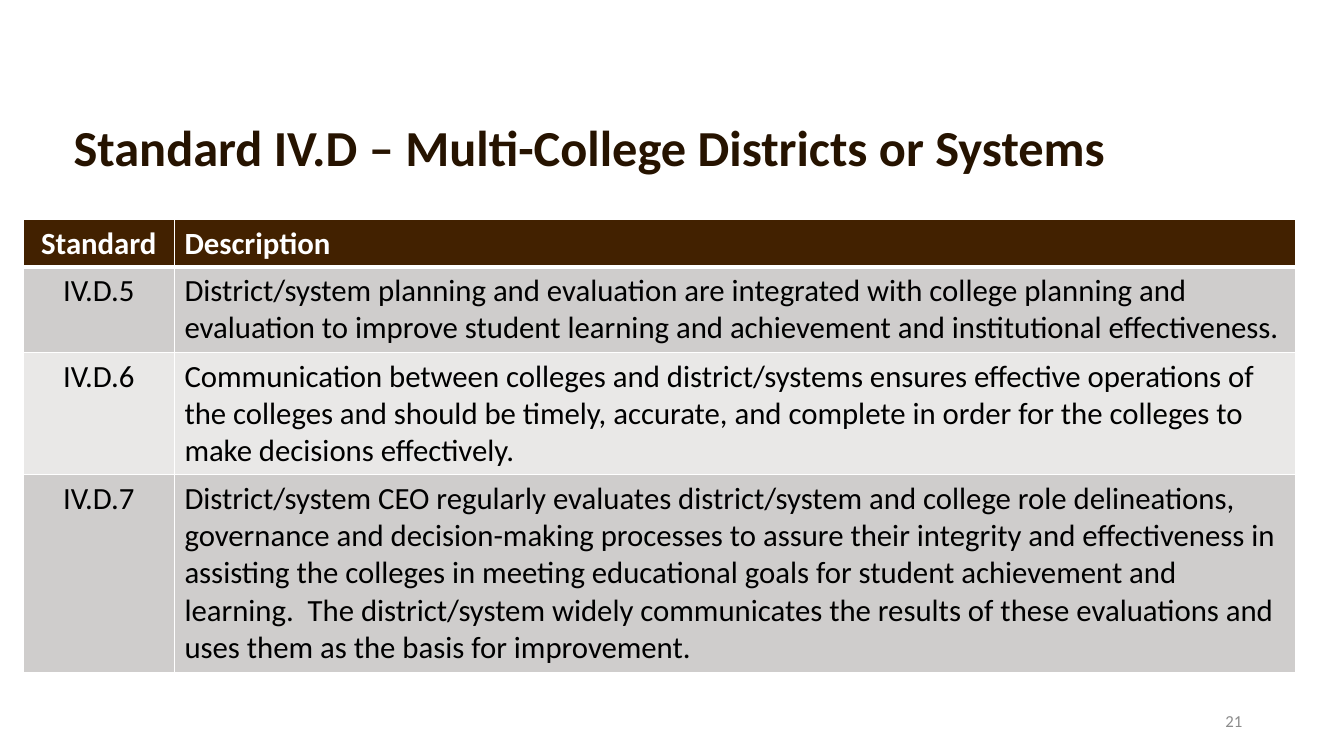
from dataclasses import dataclass

from lxml.etree import SubElement
from pptx import Presentation
from pptx.dml.color import RGBColor
from pptx.enum.text import MSO_ANCHOR, MSO_AUTO_SIZE, PP_ALIGN
from pptx.oxml.ns import qn
from pptx.slide import Slide
from pptx.table import _Cell as Cell
from pptx.text.text import TextFrame
from pptx.util import Inches, Pt

FONT = "Calibri"
TITLE_BROWN = RGBColor(0x26, 0x13, 0x00)
HEADER_BROWN = RGBColor(0x42, 0x21, 0x00)
DARK_BAND = RGBColor(0xCF, 0xCD, 0xCC)
LIGHT_BAND = RGBColor(0xE9, 0xE8, 0xE7)
WHITE = RGBColor(0xFF, 0xFF, 0xFF)
BLACK = RGBColor(0x00, 0x00, 0x00)
GREY = RGBColor(0x8C, 0x8C, 0x8C)
COLUMN_WIDTHS = (1.5, 11.12)


@dataclass
class Row:
    standard: str
    description: str
    height: float


ROWS = [
    Row("Standard", "Description", 0.47),
    Row("IV.D.5", "District/system planning and evaluation are integrated with college "
        "planning and evaluation to improve student learning and achievement and "
        "institutional effectiveness.", 0.85),
    Row("IV.D.6", "Communication between colleges and district/systems ensures effective "
        "operations of the colleges and should be timely, accurate, and complete in order "
        "for the colleges to make decisions effectively.", 1.21),
    Row("IV.D.7", "District/system CEO regularly evaluates district/system and college role "
        "delineations, governance and decision-making processes to assure their integrity "
        "and effectiveness in assisting the colleges in meeting educational goals for "
        "student achievement and learning.  The district/system widely communicates the "
        "results of these evaluations and uses them as the basis for improvement.", 1.96),
]


def write(tf: TextFrame, text: str, size: float, color: RGBColor,
          bold: bool = False, align: PP_ALIGN = PP_ALIGN.LEFT) -> None:
    tf.text = text
    p = tf.paragraphs[0]
    p.alignment = align
    p.font.name = FONT
    p.font.size = Pt(size)
    p.font.bold = bold
    p.font.color.rgb = color


def set_borders(cell: Cell, top: float, bottom: float) -> None:
    """Draw white borders, 1 pt wide at the sides; call before setting the fill."""
    tc_pr = cell._tc.get_or_add_tcPr()
    for side, width in (("L", 1), ("R", 1), ("T", top), ("B", bottom)):
        line = SubElement(tc_pr, qn(f"a:ln{side}"), w=str(Pt(width)))
        fill = SubElement(line, qn("a:solidFill"))
        SubElement(fill, qn("a:srgbClr"), val=str(WHITE))


def add_title(s: Slide) -> None:
    title = s.shapes.title
    title.left, title.top = Inches(0.63), Inches(0.99)
    title.width, title.height = Inches(12.22), Inches(1)
    tf = title.text_frame
    tf.word_wrap = True
    tf.auto_size = MSO_AUTO_SIZE.NONE
    tf.vertical_anchor = MSO_ANCHOR.MIDDLE
    write(tf, "Standard IV.D – Multi-College Districts or Systems", 36, TITLE_BROWN, bold=True)
    tf.paragraphs[0].line_spacing = 0.9


def add_standards_table(s: Slide) -> None:
    table = s.shapes.add_table(
        len(ROWS), len(COLUMN_WIDTHS), Inches(0.23), Inches(2.18),
        Inches(sum(COLUMN_WIDTHS)), Inches(sum(row.height for row in ROWS))).table
    for column, width in zip(table.columns, COLUMN_WIDTHS):
        column.width = Inches(width)
    for i, row in enumerate(ROWS):
        table.rows[i].height = Inches(row.height)
        header = i == 0
        band = HEADER_BROWN if header else DARK_BAND if i % 2 else LIGHT_BAND
        for j, text in enumerate((row.standard, row.description)):
            cell = table.cell(i, j)
            set_borders(cell, top=3 if i == 1 else 1, bottom=3 if header else 1)
            cell.fill.solid()
            cell.fill.fore_color.rgb = band
            write(cell.text_frame, text, 22, WHITE if header else BLACK, bold=header,
                  align=PP_ALIGN.LEFT if j else PP_ALIGN.CENTER)


def add_slide_number(s: Slide) -> None:
    tf = s.shapes.add_textbox(Inches(9.42), Inches(6.95), Inches(3), Inches(0.4)).text_frame
    tf.word_wrap = True
    tf.vertical_anchor = MSO_ANCHOR.MIDDLE
    write(tf, "21", 12, GREY, align=PP_ALIGN.RIGHT)


def main() -> None:
    prs = Presentation()
    prs.slide_width, prs.slide_height = Inches(13.33), Inches(7.5)
    s = prs.slides.add_slide(prs.slide_layouts[5])
    add_title(s)
    add_slide_number(s)
    add_standards_table(s)
    prs.save("out.pptx")


if __name__ == "__main__":
    main()
